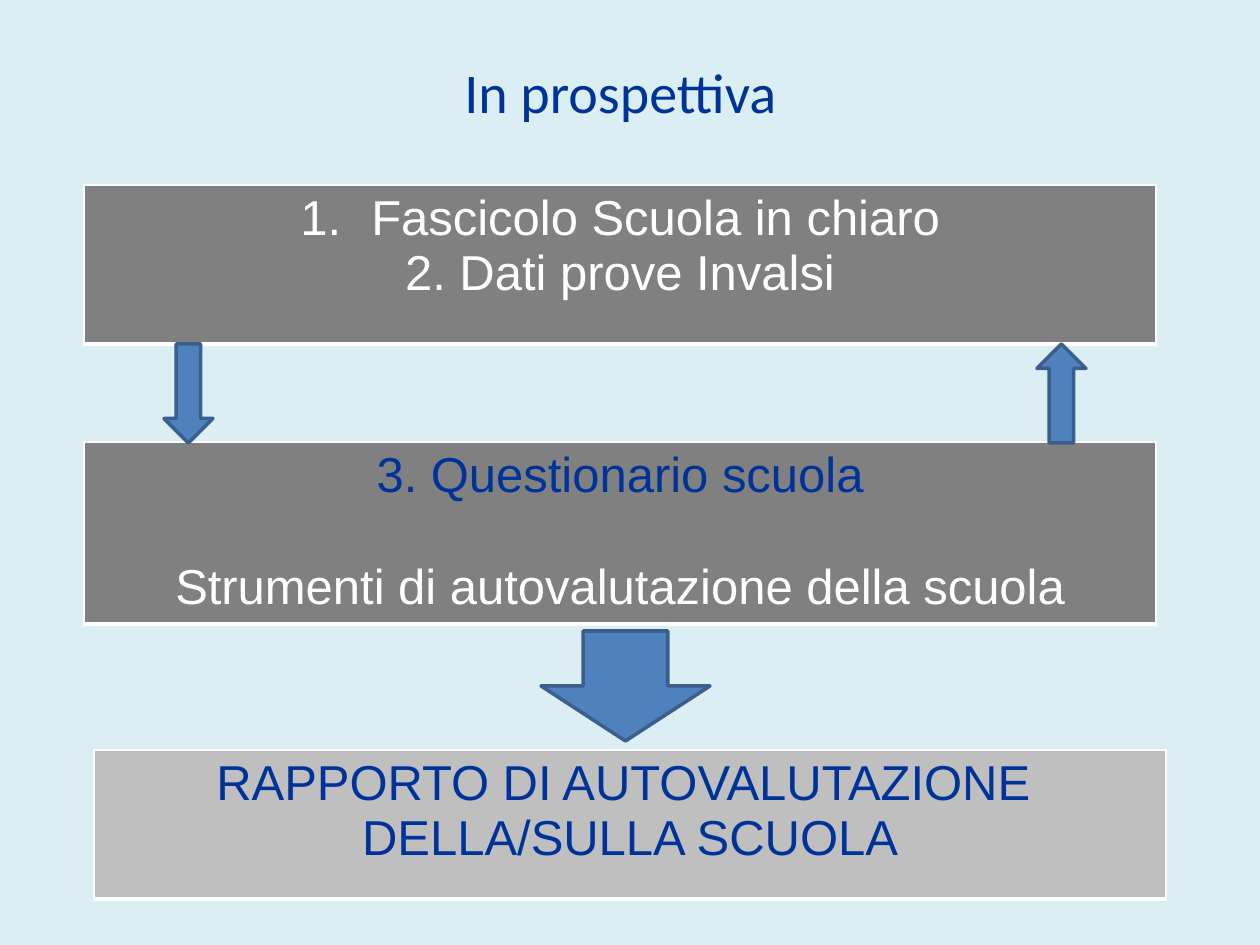
from pptx import Presentation
from pptx.dml.color import RGBColor
from pptx.enum.shapes import MSO_SHAPE
from pptx.enum.text import MSO_ANCHOR, PP_ALIGN
from pptx.oxml import parse_xml
from pptx.oxml.ns import nsdecls
from pptx.util import Emu, Pt

PX = 914400 / 126  # EMU in one px
THEME = {
    "back": "DBEEF4", "navy": "003399", "white": "FFFFFF",
    "dark": "808080", "light": "BFBFBF", "blue": "4F81BD", "edge": "3A5F8C",
    "title": 32, "body": 28,
}
HANG = 71  # hanging indent, px


def color(name):
    return RGBColor.from_string(THEME[name])


def write(para, text, size="body", font="Arial", ink="navy", hang=0, number=False, gap=0):
    para.alignment = PP_ALIGN.CENTER
    para.space_before = Pt(gap)
    run = para.add_run()
    run.text = text
    run.font.size = Pt(THEME[size])
    run.font.name = font
    run.font.bold = False
    run.font.color.rgb = color(ink)
    props = para._p.get_or_add_pPr()
    if hang:
        props.set("marL", str(round(hang * PX)))
        props.set("indent", str(round(-hang * PX)))
    if number:
        props.append(parse_xml(f'<a:buAutoNum {nsdecls("a")} type="arabicPeriod"/>'))


# Slide and background
deck = Presentation()
deck.slide_width, deck.slide_height = Emu(round(1260 * PX)), Emu(round(945 * PX))
slide = deck.slides.add_slide(deck.slide_layouts[5])
slide.background.fill.solid()
slide.background.fill.fore_color.rgb = color("back")

# Title
title = slide.shapes.title
title.left, title.top, title.width, title.height = [Emu(round(n * PX)) for n in (44, 38, 1153, 107)]
title.text_frame.vertical_anchor = MSO_ANCHOR.MIDDLE
write(title.text_frame.paragraphs[0], "In prospettiva", size="title", font="Calibri")

# One-cell tables: box in px, fill, lines of text with their format
panels = [
    ((84, 185, 1072, 159), "dark", [
        ("Fascicolo Scuola in chiaro", {"ink": "white", "hang": HANG, "number": True}),
        ("2. Dati prove Invalsi", {"ink": "white"})]),
    ((84, 442, 1072, 182), "dark", [
        ("3. Questionario scuola", {}),
        ("Strumenti di autovalutazione della scuola", {"ink": "white", "gap": 33})]),
    ((94, 750, 1072, 149), "light", [
        ("RAPPORTO DI AUTOVALUTAZIONE ", {"hang": HANG}),
        ("DELLA/SULLA SCUOLA", {"hang": HANG})]),
]
for box, fill, lines in panels:
    table = slide.shapes.add_table(1, 1, *[Emu(round(n * PX)) for n in box]).table
    table.first_row = table.horz_banding = False
    cell = table.cell(0, 0)
    cell.fill.solid()
    cell.fill.fore_color.rgb = color(fill)
    # White borders, heavier at the bottom
    props = cell._tc.get_or_add_tcPr()
    for spot, (side, width) in enumerate([("L", 1), ("R", 1), ("T", 1), ("B", 3)]):
        props.insert(spot, parse_xml(
            f'<a:ln{side} {nsdecls("a")} w="{Pt(width)}"><a:solidFill>'
            f'<a:srgbClr val="{THEME["white"]}"/></a:solidFill></a:ln{side}>'))
    for row, (text, look) in enumerate(lines):
        frame = cell.text_frame
        para = frame.add_paragraph() if row else frame.paragraphs[0]
        write(para, text, **look)

# Block arrows: box in px, turn in degrees
arrows = [((164, 344, 49, 99), 0), ((1037, 344, 49, 99), 180), ((541, 631, 169, 110), 0)]
for box, turn in arrows:
    arrow = slide.shapes.add_shape(MSO_SHAPE.DOWN_ARROW, *[Emu(round(n * PX)) for n in box])
    arrow.rotation = turn
    arrow.shadow.inherit = False
    arrow.fill.solid()
    arrow.fill.fore_color.rgb = color("blue")
    arrow.line.color.rgb = color("edge")
    arrow.line.width = Pt(2)

deck.save("out.pptx")
